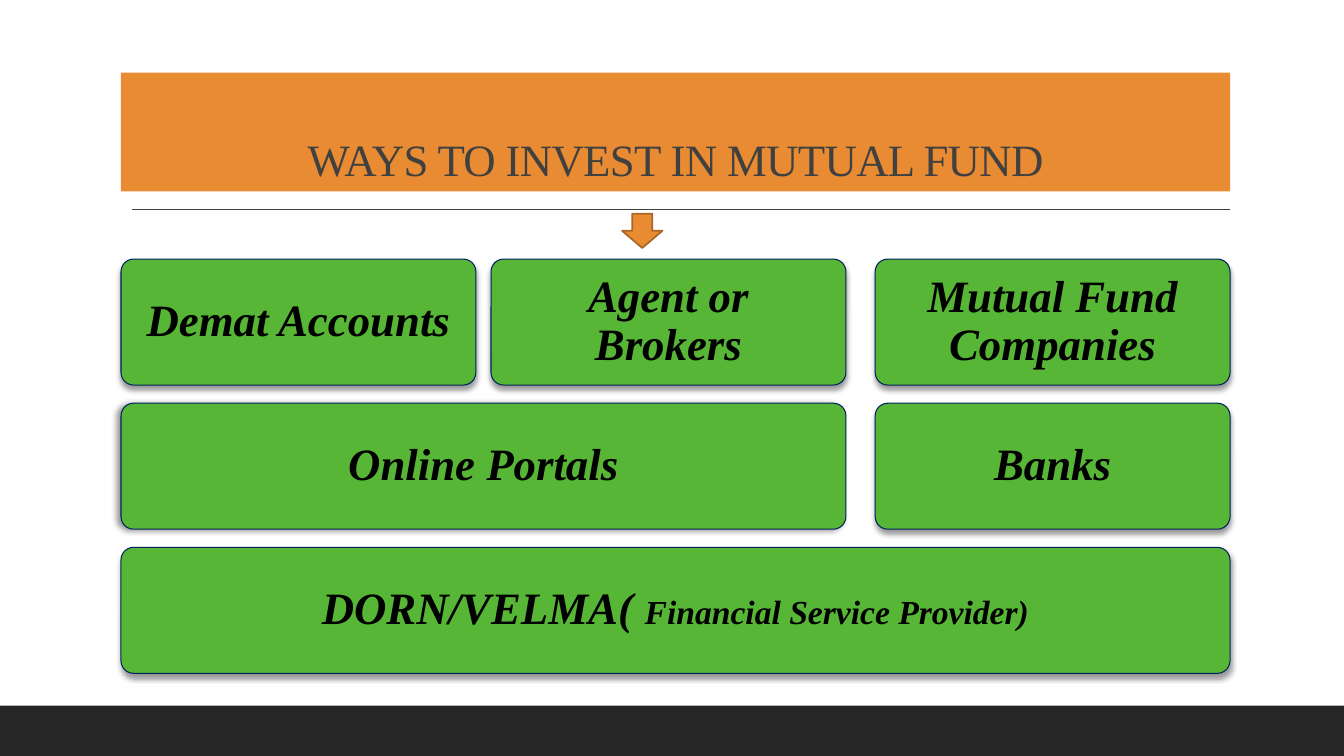
from dataclasses import dataclass

import pptx
import pptx.dml.color
import pptx.enum.shapes
import pptx.enum.text
import pptx.oxml
import pptx.oxml.ns
import pptx.util
from pptx.util import Inches

SHAPES = pptx.enum.shapes.MSO_SHAPE
ANCHORS = pptx.enum.text.MSO_ANCHOR


@dataclass(frozen=True)
class Theme:
    """Colours, font and type sizes of the slide."""
    orange: str = "E88B33"
    arrow_edge: str = "AC6726"
    green: str = "57B636"
    navy: str = "002060"
    grey: str = "404040"
    footer: str = "262626"
    black: str = "000000"
    font: str = "Times New Roman"
    large: int = 32
    small: int = 24


THEME = Theme()


def rgb(code):
    """Return the colour for a hex code."""
    return pptx.dml.color.RGBColor.from_string(code)


def write(shape, *parts, color, bold=False, italic=False, spacing=0,
          anchor=ANCHORS.MIDDLE, inset=0.1):
    """Write centred (text, size) parts into one paragraph of a shape."""
    frame = shape.text_frame
    frame.word_wrap = True
    frame.auto_size = pptx.enum.text.MSO_AUTO_SIZE.NONE
    frame.vertical_anchor = anchor
    frame.margin_left = frame.margin_right = Inches(inset)
    paragraph = frame.paragraphs[0]
    paragraph.alignment = pptx.enum.text.PP_ALIGN.CENTER
    paragraph.line_spacing = 0.9
    for text, size in parts:
        run = paragraph.add_run()
        run.text = text
        run.font.name = THEME.font
        run.font.size = pptx.util.Pt(size)
        run.font.bold = bold
        run.font.italic = italic
        run.font.color.rgb = rgb(color)
        if spacing:
            run.font._element.set("spc", str(round(spacing * 100)))


def add_block(slide, preset, box, fill, edge=None, weight=1):
    """Add a flat filled preset shape in a (left, top, width, height) box."""
    block = slide.shapes.add_shape(preset, *map(Inches, box))
    block.shadow.inherit = False
    block.fill.solid()
    block.fill.fore_color.rgb = rgb(fill)
    if edge:
        block.line.color.rgb = rgb(edge)
        block.line.width = pptx.util.Pt(weight)
    else:
        block.line.fill.background()
    return block


def cast_shadow(shape, angle):
    """Give a shape a soft black shadow towards an angle in degrees."""
    effects = shape._element.spPr.find(pptx.oxml.ns.qn("a:effectLst"))
    effects.append(pptx.oxml.parse_xml(
        f'<a:outerShdw {pptx.oxml.ns.nsdecls("a")} blurRad="50800" dist="38100" '
        f'dir="{angle * 60000}" algn="t" rotWithShape="0">'
        f'<a:srgbClr val="{THEME.black}"><a:alpha val="40000"/></a:srgbClr>'
        '</a:outerShdw>'))


def add_header(slide, box):
    """Place the title bar, the rule under it and the arrow to the cards."""
    left, top, width, height = box
    title = slide.shapes.title
    title.left, title.top, title.width, title.height = map(Inches, box)
    title.fill.solid()
    title.fill.fore_color.rgb = rgb(THEME.orange)
    write(title, ("WAYS TO INVEST IN MUTUAL FUND", THEME.large),
          color=THEME.grey, spacing=-0.5, anchor=ANCHORS.BOTTOM)

    rule_y = top + height + 0.18
    rule = slide.shapes.add_connector(
        pptx.enum.shapes.MSO_CONNECTOR.STRAIGHT, Inches(left + 0.11),
        Inches(rule_y), Inches(left + width), Inches(rule_y))
    rule.line.color.rgb = rgb(THEME.grey)
    rule.line.width = pptx.util.Pt(1)
    rule._element.spPr.append(pptx.oxml.parse_xml(
        f'<a:effectLst {pptx.oxml.ns.nsdecls("a")}/>'))
    add_block(slide, SHAPES.DOWN_ARROW, (left + 4.97, rule_y + 0.04, 0.4, 0.34),
              THEME.orange, THEME.arrow_edge, 1.25)


def add_card(slide, box, *parts, angle=90):
    """Place one rounded green card with its wording."""
    card = add_block(slide, SHAPES.ROUNDED_RECTANGLE, box,
                     THEME.green, THEME.navy, 0.75)
    card.adjustments[0] = 0.1
    cast_shadow(card, angle)
    write(card, *parts, color=THEME.black, bold=True, italic=True, inset=0.16)


def add_ways(slide, box):
    """Place the three rows of cards, each row wider than the one above."""
    left, top, width, height = box
    card_width, card_height, inner_gap = 3.52, 1.25, 0.15
    pair_width = 2 * card_width + inner_gap
    second = left + card_width + inner_gap
    third = left + width - card_width
    pitch = (height - card_height) / 2
    ways = [
        (0, left, card_width, 90, [("Demat Accounts", THEME.large)]),
        (0, second, card_width, 90, [("Agent or Brokers", THEME.large)]),
        (0, third, card_width, 90, [("Mutual Fund Companies", THEME.large)]),
        (1, left, pair_width, 180, [("Online Portals", THEME.large)]),
        (1, third, card_width, 90, [("Banks", THEME.large)]),
        (2, left, width, 90, [("DORN/VELMA( ", THEME.large),
                              ("Financial Service Provider)", THEME.small)]),
    ]
    for row, x, way_width, angle, parts in ways:
        add_card(slide, (x, top + row * pitch, way_width, card_height),
                 *parts, angle=angle)


def main():
    """Build and save the slide."""
    deck = pptx.Presentation()
    deck.slide_width, deck.slide_height = Inches(13.33), Inches(7.5)
    slide = deck.slides.add_slide(deck.slide_layouts.get_by_name("Title Only"))
    add_block(slide, SHAPES.RECTANGLE, (0, 7, 13.33, 0.5), THEME.footer)
    add_header(slide, (1.2, 0.72, 11, 1.18))
    add_ways(slide, (1.2, 2.57, 11, 4.11))
    deck.save("out.pptx")


if __name__ == "__main__":
    main()
